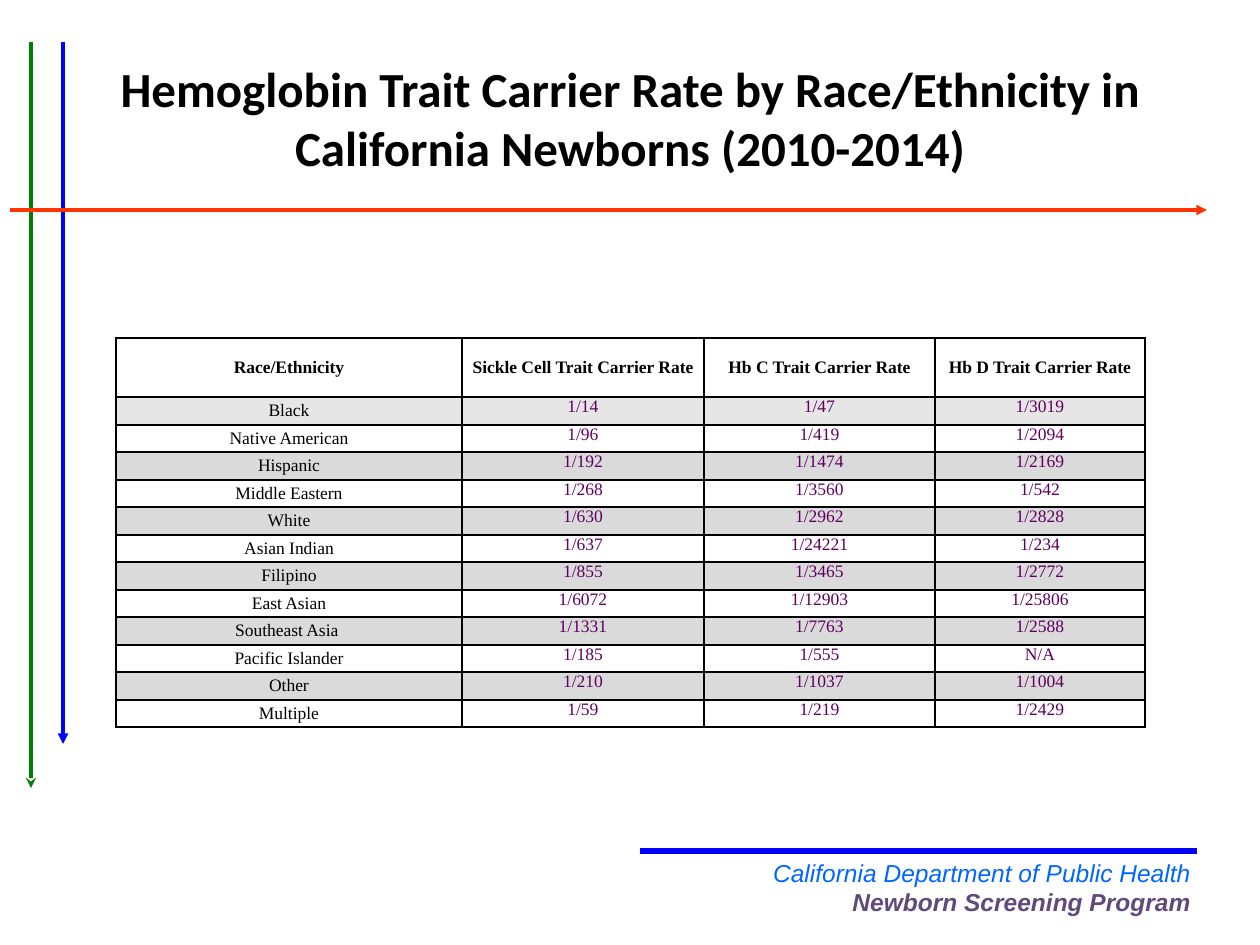
from lxml import etree
from pptx import Presentation, util as u
from pptx.dml.color import RGBColor
from pptx.enum import shapes, text
from pptx.oxml import ns

SCALE = 914400 / 126
BLACK = RGBColor(0x00, 0x00, 0x00)
GREEN = RGBColor(0x00, 0x80, 0x00)
BLUE = RGBColor(0x00, 0x00, 0xFF)
ORANGE = RGBColor(0xFF, 0x33, 0x00)
SKY = RGBColor(0x00, 0x66, 0xFF)
VIOLET = RGBColor(0x60, 0x4A, 0x7B)
PLUM = RGBColor(0x5F, 0x00, 0x60)
LIGHT_GRAY = RGBColor(0xE6, 0xE6, 0xE6)
GRAY = RGBColor(0xDA, 0xDA, 0xDA)


def px(value):
    return u.Emu(round(value * SCALE))


def style_font(font, color, **values):
    font.color.rgb = color
    for name, value in values.items():
        setattr(font, name, value)


presentation = Presentation()
presentation.slide_width = px(1260)
presentation.slide_height = px(945)
slide = presentation.slides.add_slide(presentation.slide_layouts[6])

for x1, y1, x2, y2, color, width, arrowhead in [
    (31, 42, 31, 788, GREEN, 2, "stealth"),
    (63, 42, 63, 744, BLUE, 2, "triangle"),
    (10, 210, 1207, 210, ORANGE, 2, "triangle"),
    (640, 851, 1197, 851, BLUE, 3, None),
]:
    line = slide.shapes.add_connector(shapes.MSO_CONNECTOR.STRAIGHT, px(x1), px(y1), px(x2), px(y2))
    line.line.color.rgb = color
    line.line.width = u.Pt(width)
    if arrowhead:
        etree.SubElement(line.line._get_or_add_ln(), ns.qn("a:tailEnd"), type=arrowhead)
    etree.SubElement(line._element.spPr, ns.qn("a:effectLst"))

title_font = {"name": "Calibri", "size": u.Pt(28), "bold": True}
footer_font = {"name": "Arial", "size": u.Pt(14), "italic": True}
for left, top, width, height, anchor, alignment, runs in [
    (640, 852, 557, 68, text.MSO_ANCHOR.TOP, text.PP_ALIGN.RIGHT, [
        ("California Department of Public Health", SKY, footer_font),
        ("Newborn Screening Program", VIOLET, {**footer_font, "bold": True}),
    ]),
    (63, 38, 1134, 158, text.MSO_ANCHOR.MIDDLE, text.PP_ALIGN.CENTER, [
        ("Hemoglobin Trait Carrier Rate by Race/Ethnicity in California Newborns (2010-2014)",
         BLACK, title_font),
    ]),
]:
    frame = slide.shapes.add_textbox(px(left), px(top), px(width), px(height)).text_frame
    frame.word_wrap = True
    frame.vertical_anchor = anchor
    for side in ("left", "right", "top", "bottom"):
        setattr(frame, f"margin_{side}", px(6))
    paragraph = frame.paragraphs[0]
    paragraph.alignment = alignment
    for index, (words, color, font) in enumerate(runs):
        if index:
            paragraph.add_line_break()
        run = paragraph.add_run()
        run.text = words
        style_font(run.font, color, **font)

rates = [
    ("Race/Ethnicity", "Sickle Cell Trait Carrier Rate", "Hb C Trait Carrier Rate", "Hb D Trait Carrier Rate"),
    ("Black", "1/14", "1/47", "1/3019"),
    ("Native American", "1/96", "1/419", "1/2094"),
    ("Hispanic", "1/192", "1/1474", "1/2169"),
    ("Middle Eastern", "1/268", "1/3560", "1/542"),
    ("White", "1/630", "1/2962", "1/2828"),
    ("Asian Indian", "1/637", "1/24221", "1/234"),
    ("Filipino", "1/855", "1/3465", "1/2772"),
    ("East Asian", "1/6072", "1/12903", "1/25806"),
    ("Southeast Asia ", "1/1331", "1/7763", "1/2588"),
    ("Pacific Islander", "1/185", "1/555", "N/A"),
    ("Other", "1/210", "1/1037", "1/1004"),
    ("Multiple", "1/59", "1/219", "1/2429"),
]
column_widths = [346, 242, 231, 210]
table = slide.shapes.add_table(
    len(rates), len(column_widths), px(116), px(338), px(sum(column_widths)), px(389)
).table
table.first_row = table.horz_banding = False
for column, width in zip(table.columns, column_widths):
    column.width = px(width)

for row_index, row in enumerate(rates):
    is_header = row_index == 0
    table.rows[row_index].height = px(59 if is_header else 27 + row_index % 2)
    for column_index, words in enumerate(row):
        is_label = is_header or column_index == 0
        cell = table.cell(row_index, column_index)
        cell.text = words
        cell.vertical_anchor = text.MSO_ANCHOR.MIDDLE if is_label else text.MSO_ANCHOR.TOP
        for side in ("left", "right", "top", "bottom"):
            setattr(cell, f"margin_{side}", px(1 if is_label else 0))
        paragraph = cell.text_frame.paragraphs[0]
        paragraph.alignment = text.PP_ALIGN.CENTER
        style_font(paragraph.runs[0].font, BLACK if is_label else PLUM,
                   name="Times New Roman", size=u.Pt(10), bold=is_header)
        properties = cell._tc.get_or_add_tcPr()
        for edge in ("lnL", "lnR", "lnT", "lnB"):
            border = etree.SubElement(properties, ns.qn(f"a:{edge}"), w=str(u.Pt(1)))
            fill = etree.SubElement(border, ns.qn("a:solidFill"))
            etree.SubElement(fill, ns.qn("a:srgbClr"), val=str(BLACK))
        if row_index % 2:
            cell.fill.solid()
            cell.fill.fore_color.rgb = LIGHT_GRAY if row_index == 1 else GRAY
        else:
            cell.fill.background()

presentation.save("out.pptx")
